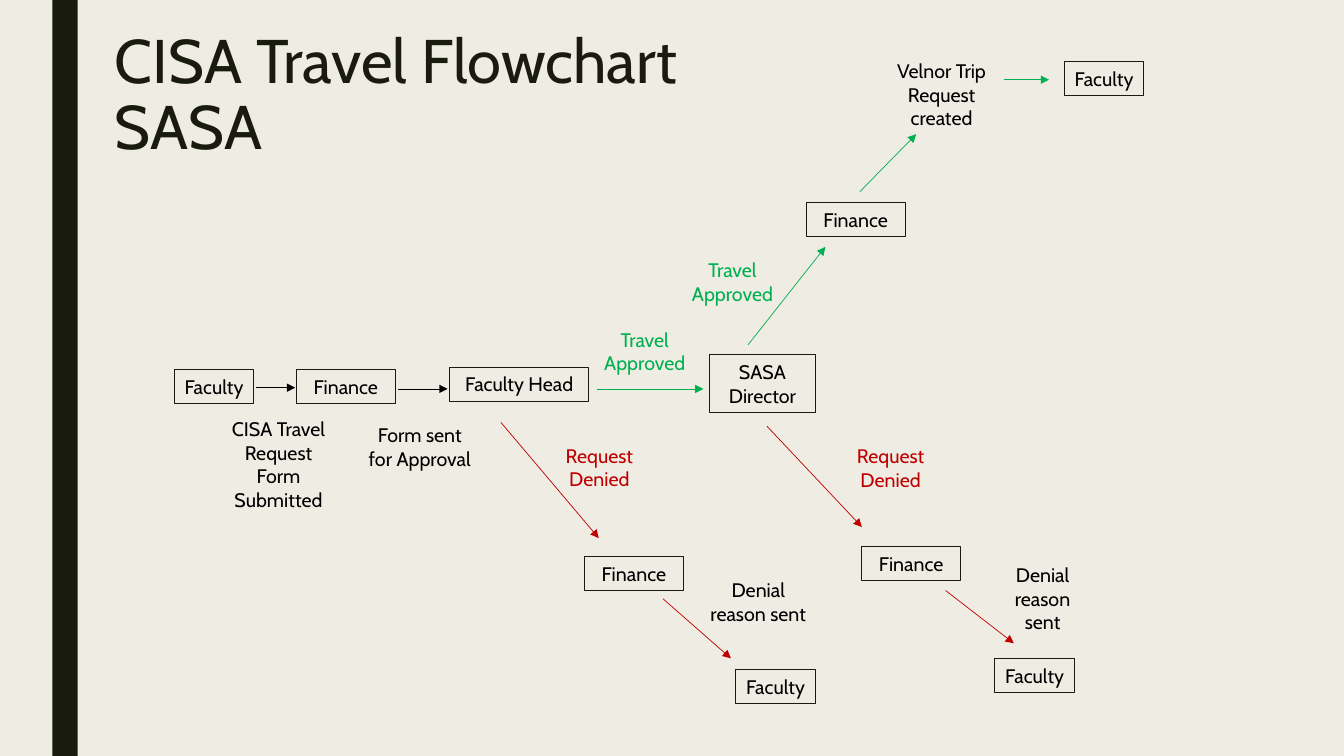
from dataclasses import dataclass

from lxml.etree import SubElement
from pptx import Presentation
from pptx.dml.color import RGBColor
from pptx.enum.shapes import MSO_CONNECTOR, MSO_SHAPE
from pptx.enum.text import MSO_ANCHOR, MSO_AUTO_SIZE, PP_ALIGN
from pptx.oxml.ns import qn
from pptx.util import Cm, Pt


@dataclass(frozen=True)
class Theme:
    font: str = "Cabin"
    title_size: Pt = Pt(44)
    body_size: Pt = Pt(14)
    box_line: Pt = Pt(0.75)
    arrow_line: Pt = Pt(0.5)
    paper: RGBColor = RGBColor(0xEF, 0xED, 0xE3)
    dark: RGBColor = RGBColor(0x19, 0x1B, 0x0E)
    black: RGBColor = RGBColor(0, 0, 0)
    approved: RGBColor = RGBColor(0x00, 0xB0, 0x50)
    denied: RGBColor = RGBColor(0xC0, 0, 0)


theme = Theme()


def add_run(p, text, size, color):
    r = p.add_run()
    r.text = text
    r.font.name = theme.font
    r.font.size = size
    r.font.color.rgb = color


def write_centred(sp, text, color):
    """Fill a box or label with one centred paragraph."""
    tf = sp.text_frame
    tf.word_wrap = True
    tf.auto_size = MSO_AUTO_SIZE.SHAPE_TO_FIT_TEXT
    p = tf.paragraphs[0]
    p.alignment = PP_ALIGN.CENTER
    add_run(p, text, theme.body_size, color)


prs = Presentation()
prs.slide_width, prs.slide_height = Cm(33.87), Cm(19.05)
s = prs.slides.add_slide(prs.slide_layouts[5])
s.background.fill.solid()
s.background.fill.fore_color.rgb = theme.paper

sidebar = s.shapes.add_shape(MSO_SHAPE.RECTANGLE, Cm(1.32), Cm(0), Cm(0.64), prs.slide_height)
sidebar.shadow.inherit = False
sidebar.fill.solid()
sidebar.fill.fore_color.rgb = theme.dark
sidebar.line.fill.background()

title = s.shapes.title
title.left, title.top, title.width, title.height = Cm(2.64), Cm(0.66), Cm(26.67), Cm(4.11)
tf = title.text_frame
tf.word_wrap = True
tf.auto_size = MSO_AUTO_SIZE.NONE
tf.vertical_anchor = MSO_ANCHOR.TOP
p = tf.paragraphs[0]
p.alignment = PP_ALIGN.LEFT
p.line_spacing = 0.89
add_run(p, "CISA Travel Flowchart", theme.title_size, theme.dark)
p.add_line_break()
add_run(p, "SASA", theme.title_size, theme.dark)

# Each kind of box: text, width, height, top-left corners
boxes = [
    ("Faculty", 2.01, 0.86, [(4.39, 9.32), (26.82, 1.55), (18.54, 16.87), (25.07, 16.59)]),
    ("Finance", 2.49, 0.86, [(7.47, 9.32), (20.32, 5.11), (14.73, 14.02), (21.72, 13.77)]),
    ("Faculty Head", 3.51, 0.86, [(11.33, 9.25)]),
    ("SASA Director", 2.67, 1.45, [(17.88, 8.94)]),
]
for text, width, height, corners in boxes:
    for x, y in corners:
        sp = s.shapes.add_shape(MSO_SHAPE.RECTANGLE, Cm(x), Cm(y), Cm(width), Cm(height))
        sp.shadow.inherit = False
        sp.fill.background()
        sp.line.color.rgb = theme.dark
        sp.line.width = theme.box_line
        write_centred(sp, text, theme.black)

# Each label: text, colour, left, top, width, height
labels = [
    ("CISA Travel Request Form Submitted", theme.black, 5.46, 10.39, 3.12, 2.64),
    ("Form sent for Approval", theme.black, 9.02, 10.54, 3.12, 1.45),
    ("Velnor Trip Request created", theme.black, 22.17, 1.37, 3.12, 2.06),
    ("Denial reason sent", theme.black, 17.65, 14.45, 2.92, 2.06),
    ("Denial reason sent", theme.black, 24.99, 14.07, 2.57, 2.06),
    ("Travel Approved", theme.approved, 14.55, 8.13, 3.4, 1.45),
    ("Travel Approved", theme.approved, 16.76, 6.38, 3.4, 1.45),
    ("Request Denied", theme.denied, 13.44, 11.05, 3.33, 1.45),
    ("Request Denied", theme.denied, 20.78, 11.07, 3.33, 1.45),
]
for text, color, *frame in labels:
    write_centred(s.shapes.add_textbox(*map(Cm, frame)), text, color)

# Arrows by outcome: start x, start y, end x, end y
arrows = {
    theme.black: [(6.45, 9.77, 7.44, 9.77), (10.03, 9.8, 11.28, 9.8)],
    theme.approved: [
        (15.04, 9.8, 17.73, 9.8),
        (18.85, 8.69, 20.8, 6.22),
        (21.67, 4.83, 23.09, 3.38),
        (25.3, 2.01, 26.44, 2.01),
    ],
    theme.denied: [
        (12.62, 10.64, 15.09, 13.56),
        (19.33, 10.74, 21.72, 13.28),
        (16.71, 15.09, 18.42, 16.59),
        (23.83, 14.88, 25.55, 16.21),
    ],
}
for color, routes in arrows.items():
    for route in routes:
        arrow = s.shapes.add_connector(MSO_CONNECTOR.STRAIGHT, *map(Cm, route))
        arrow.line.color.rgb = color
        arrow.line.width = theme.arrow_line
        line_xml = arrow._element.spPr.find(qn("a:ln"))
        SubElement(line_xml, qn("a:tailEnd"), type="triangle")
        SubElement(arrow._element.spPr, qn("a:effectLst"))

prs.save("out.pptx")
